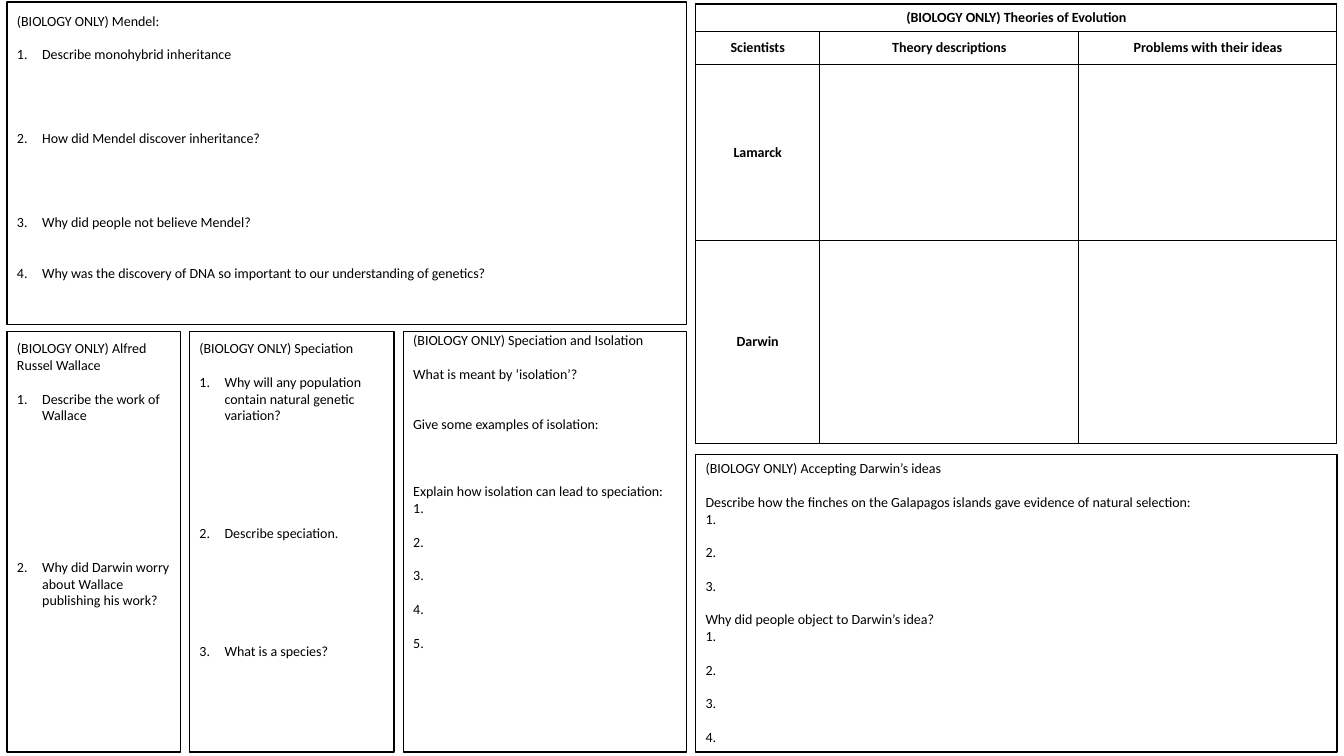
from lxml.etree import SubElement
from pptx import Presentation
from pptx.dml.color import RGBColor
from pptx.enum.shapes import MSO_SHAPE as Shape
from pptx.enum.text import MSO_ANCHOR as Anchor, PP_ALIGN as Align
from pptx.oxml.ns import qn
from pptx.util import Emu, Pt

EMU_PER_PX = 9144  # 100 px to the inch
COLORS = {"ink": "000000", "paper": "FFFFFF"}
FONT, TEXT_SIZE, LINE_PITCH = "Calibri", 10, 12
LIST_INDENT = 25
LOWER_TOP, LOWER_HEIGHT = 329, 417

# Each entry: (blank lines above, text)
MENDEL = [
    (1, "Describe monohybrid inheritance"),
    (4, "How did Mendel discover inheritance?"),
    (4, "Why did people not believe Mendel?"),
    (2, "Why was the discovery of DNA so important to our understanding of genetics?"),
]
WALLACE = [
    (1, "Describe the work of Wallace"),
    (8, "Why did Darwin worry about Wallace publishing his work?"),
]
SPECIATION = [
    (1, "Why will any population contain natural genetic variation?"),
    (6, "Describe speciation."),
    (6, "What is a species?"),
]


def answer_lines(count):
    """Written numbers, the first directly under its question."""
    return [(int(n > 1), f"{n}.") for n in range(1, count + 1)]


ISOLATION = [
    (1, "What is meant by ‘isolation’?"),
    (2, "Give some examples of isolation:"),
    (3, "Explain how isolation can lead to speciation:"),
    *answer_lines(5),
]
ACCEPTANCE = [
    (1, "Describe how the finches on the Galapagos islands gave evidence of natural selection:"),
    *answer_lines(3),
    (1, "Why did people object to Darwin’s idea?"),
    *answer_lines(4),
]
THEORY_ROWS = [
    ["(BIOLOGY ONLY) Theories of Evolution", "", ""],
    ["Scientists", "Theory descriptions", "Problems with their ideas"],
    ["Lamarck", "", ""],
    ["Darwin", "", ""],
]


def px(length):
    return Emu(length * EMU_PER_PX)


def color(name):
    return RGBColor.from_string(COLORS[name])


def format_text(paragraph, bold=False):
    for run in paragraph.runs:
        run.font.name = FONT
        run.font.size = Pt(TEXT_SIZE)
        run.font.bold = bold
        run.font.color.rgb = color("ink")


def number_paragraph(paragraph):
    properties = paragraph._p.get_or_add_pPr()
    properties.set("marL", str(px(LIST_INDENT)))
    properties.set("indent", str(-px(LIST_INDENT)))
    SubElement(properties, qn("a:buFont"), typeface="+mj-lt")
    SubElement(properties, qn("a:buAutoNum"), type="arabicPeriod")


def add_question_box(slide, bounds, top_inset, heading, questions, numbered=False):
    """Add an outlined, unfilled box of questions and return it."""
    box = slide.shapes.add_shape(Shape.RECTANGLE, *map(px, bounds))
    box.shadow.inherit = False
    box.fill.background()
    box.line.color.rgb = color("ink")
    box.line.width = Pt(1)

    frame = box.text_frame
    frame.word_wrap = True
    frame.vertical_anchor = Anchor.TOP
    frame.margin_top = px(top_inset)
    frame.margin_bottom = 0
    frame.text = heading
    for blank_lines, question in questions:
        paragraph = frame.add_paragraph()
        paragraph.text = question
        paragraph.space_before = Pt(blank_lines * LINE_PITCH)
        if numbered:
            number_paragraph(paragraph)
    for paragraph in frame.paragraphs:
        paragraph.alignment = Align.LEFT
        format_text(paragraph)
    return box


def border_cell(cell):
    properties = cell._tc.get_or_add_tcPr()
    for side in ("lnL", "lnR", "lnT", "lnB"):
        line = SubElement(properties, qn(f"a:{side}"), w=str(Pt(1)))
        fill = SubElement(line, qn("a:solidFill"))
        SubElement(fill, qn("a:srgbClr"), val=COLORS["ink"])


def add_theory_table(slide, left, top, widths, heights, rows):
    bounds = (left, top, sum(widths), sum(heights))
    table = slide.shapes.add_table(len(rows), len(widths), *map(px, bounds)).table
    table.first_row = table.horz_banding = False
    for column, width in zip(table.columns, widths):
        column.width = px(width)
    for row, height, texts in zip(table.rows, heights, rows):
        row.height = px(height)
        for cell, text in zip(row.cells, texts):
            border_cell(cell)
            cell.fill.background()
            cell.vertical_anchor = Anchor.MIDDLE
            cell.text = text
            paragraph = cell.text_frame.paragraphs[0]
            paragraph.alignment = Align.CENTER
            format_text(paragraph, bold=True)
    table.cell(0, 0).merge(table.cell(0, len(widths) - 1))


def main():
    presentation = Presentation()
    presentation.slide_width, presentation.slide_height = px(1333), px(750)
    slide = presentation.slides.add_slide(presentation.slide_layouts[6])

    add_question_box(slide, (7, LOWER_TOP, 172, LOWER_HEIGHT), 8,
                     "(BIOLOGY ONLY) Alfred Russel Wallace", WALLACE, numbered=True)
    add_question_box(slide, (690, 451, 636, 295), 5,
                     "(BIOLOGY ONLY) Accepting Darwin’s ideas", ACCEPTANCE)
    add_theory_table(slide, 690, 4, (123, 257, 256), (27, 33, 175, 201), THEORY_ROWS)
    mendel_box = add_question_box(slide, (7, 2, 674, 320), 10,
                                  "(BIOLOGY ONLY) Mendel:", MENDEL, numbered=True)
    mendel_box.fill.solid()
    mendel_box.fill.fore_color.rgb = color("paper")
    add_question_box(slide, (188, LOWER_TOP, 203, LOWER_HEIGHT), 8,
                     "(BIOLOGY ONLY) Speciation", SPECIATION, numbered=True)
    add_question_box(slide, (400, LOWER_TOP, 281, LOWER_HEIGHT), 0,
                     "(BIOLOGY ONLY) Speciation and Isolation", ISOLATION)

    presentation.save("out.pptx")


if __name__ == "__main__":
    main()
